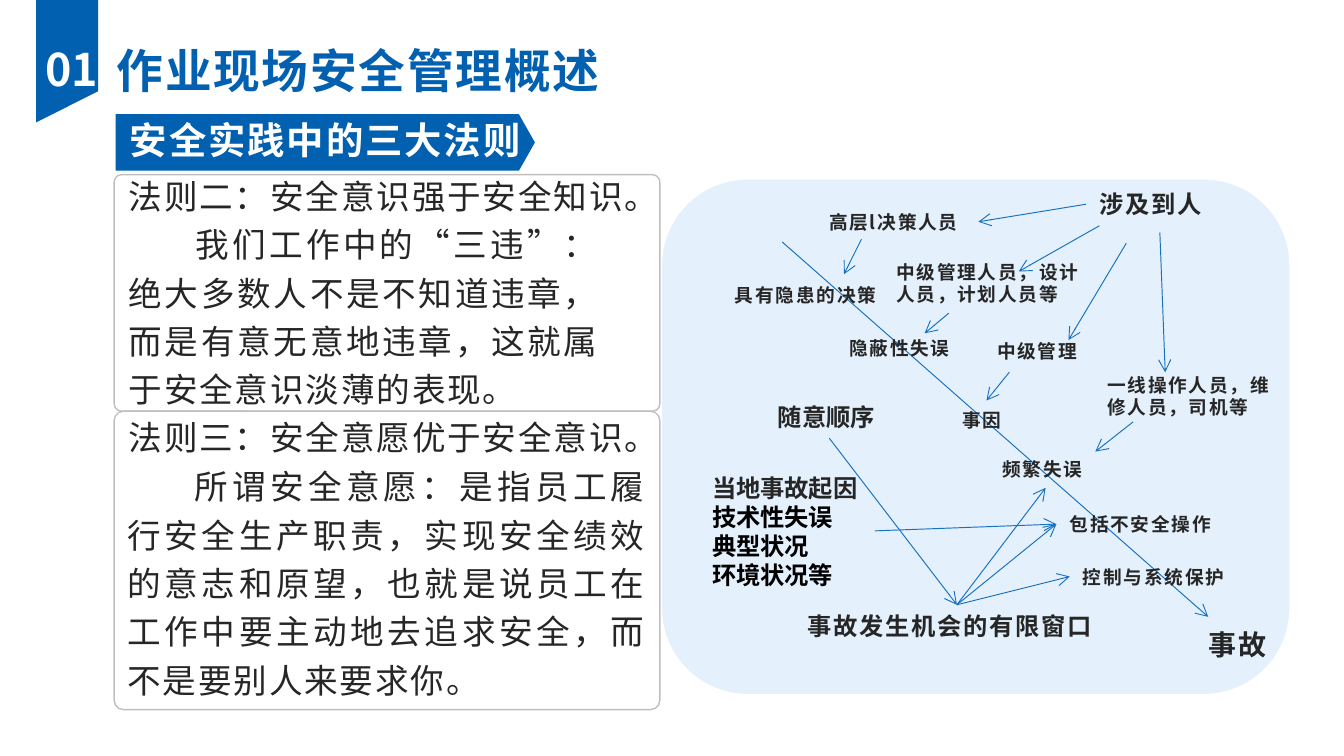
from dataclasses import dataclass, field
from typing import Any

from lxml import etree
from pptx import Presentation
from pptx import util as u
from pptx.dml.color import RGBColor
from pptx.enum import shapes, text
from pptx.oxml import ns

CM_PER_INCH = 2.54
SLIDE_WIDTH = u.Cm(25.4)
SLIDE_HEIGHT = u.Emu(SLIDE_WIDTH * 9 // 16)


@dataclass(frozen=True)
class Theme:
    font: str = "Noto Sans CJK SC"
    blue: str = "0160AF"
    arrow: str = "1770C0"
    panel: str = "CAE3F9"
    frame: str = "BFBFBF"
    ink: str = "262626"
    black: str = "000000"
    white: str = "FFFFFF"
    title: int = 25
    number: int = 24
    banner: int = 20
    body: int = 18
    outcome: int = 15
    heading: int = 13
    label: int = 10


THEME = Theme()


@dataclass(frozen=True)
class Label:
    box: tuple[float, float, float, float]
    lines: tuple[str, ...]
    size: int = THEME.label
    color: str = THEME.ink
    bold: bool = True
    spacing: int = 100
    indent: float = 0
    inset: bool = True
    rest_color: str = ""
    paragraph: dict[str, Any] = field(default_factory=dict)
    frame: dict[str, Any] = field(default_factory=dict)


@dataclass(frozen=True)
class Arrow:
    start: tuple[float, float]
    end: tuple[float, float]


@dataclass(frozen=True)
class Block:
    kind: shapes.MSO_SHAPE
    box: tuple[float, float, float, float]
    corner: float
    fill: str = ""
    line: str = ""
    width: float = 0.75
    alpha: int = 100


def length(inches: float) -> u.Length:
    return u.Cm(inches * CM_PER_INCH)


def apply(target: Any, values: dict[str, Any]) -> None:
    for name, value in values.items():
        setattr(target, name, value)


def paint(shape: Any, block: Block) -> None:
    shape.shadow.inherit = False
    if block.fill:
        shape.fill.solid()
        shape.fill.fore_color.rgb = RGBColor.from_string(block.fill)
        if block.alpha < 100:
            color = shape.fill._xPr.find(".//" + ns.qn("a:srgbClr"))
            etree.SubElement(color, ns.qn("a:alpha")).set("val", str(block.alpha * 1000))
    else:
        shape.fill.background()
    if block.line:
        shape.line.color.rgb = RGBColor.from_string(block.line)
        shape.line.width = u.Pt(block.width)
    else:
        shape.line.fill.background()


def draw_block(slide: Any, block: Block) -> None:
    shape = slide.shapes.add_shape(block.kind, *map(length, block.box))
    shape.adjustments[0] = block.corner
    paint(shape, block)


def draw_ribbon(slide: Any) -> None:
    left, right, shoulder, tip = 0.27, 0.73, 0.68, 0.91
    builder = slide.shapes.build_freeform(length(left), 0)
    corners = [(right, 0), (right, shoulder), (left, tip)]
    builder.add_line_segments([(length(x), length(y)) for x, y in corners], close=True)
    paint(builder.convert_to_shape(), Block(shapes.MSO_SHAPE.RECTANGLE, (0, 0, 0, 0), 0, THEME.blue))


def draw_label(slide: Any, label: Label) -> None:
    frame = slide.shapes.add_textbox(*map(length, label.box)).text_frame
    apply(frame, {"word_wrap": True, "auto_size": text.MSO_AUTO_SIZE.SHAPE_TO_FIT_TEXT} | label.frame)
    if not label.inset:
        apply(frame, dict.fromkeys(("margin_left", "margin_top", "margin_right", "margin_bottom"), 0))
    for index, line in enumerate(label.lines):
        paragraph = frame.add_paragraph() if index else frame.paragraphs[0]
        apply(paragraph, label.paragraph)
        if label.indent:
            paragraph._p.get_or_add_pPr().set("indent", str(length(label.indent)))
        run = paragraph.add_run()
        run.text = line
        apply(run.font, {"size": u.Pt(label.size), "bold": label.bold, "name": THEME.font})
        color = label.rest_color if index and label.rest_color else label.color
        run.font.color.rgb = RGBColor.from_string(color)
        properties = run._r.get_or_add_rPr()
        properties.set("spc", str(label.spacing))
        etree.SubElement(properties, ns.qn("a:ea")).set("typeface", THEME.font)


def draw_arrow(slide: Any, arrow: Arrow) -> None:
    connector = slide.shapes.add_connector(
        shapes.MSO_CONNECTOR.STRAIGHT, *map(length, arrow.start + arrow.end))
    connector.line.color.rgb = RGBColor.from_string(THEME.arrow)
    connector.line.width = u.Pt(0.5)
    etree.SubElement(connector.line._get_or_add_ln(), ns.qn("a:tailEnd")).set("type", "arrow")
    etree.SubElement(connector._element.spPr, ns.qn("a:effectLst"))


CENTER = {"alignment": text.PP_ALIGN.CENTER}
JUSTIFIED = {"alignment": text.PP_ALIGN.JUSTIFY, "line_spacing": 1.2}
NO_WRAP = {"word_wrap": False}
BODY = {"size": THEME.body, "bold": False}
HEADING = {"size": THEME.heading}
WINDOW = (7.12, 4.5)

BACKDROP = [
    Block(shapes.MSO_SHAPE.ROUNDED_RECTANGLE, (4.92, 1.33, 4.68, 3.84), 0.167,
          THEME.panel, THEME.white, 1, 50),
    Block(shapes.MSO_SHAPE.PENTAGON, (0.86, 0.85, 3.12, 0.42), 0.283, THEME.blue),
]
LAW_FRAMES = [
    Block(shapes.MSO_SHAPE.ROUNDED_RECTANGLE, (0.85, top, 4.06, height), 0.031, line=THEME.frame)
    for top, height in ((1.3, 1.76), (3.06, 2.22))
]
LABELS = [
    Label((0.7, 0.26, 3.93, 0.52), ("作业现场安全管理概述",), THEME.title, THEME.blue,
          paragraph=CENTER, frame=NO_WRAP),
    Label((0.18, 0.26, 0.71, 0.5), ("01",), THEME.number, THEME.white, spacing=0, paragraph=CENTER),
    Label((0.86, 0.82, 3.12, 0.44), ("安全实践中的三大法则",), THEME.banner, THEME.white,
          paragraph=CENTER, frame=NO_WRAP),
    Label((0.86, 1.26, 4.33, 0.4), ("法则二：安全意识强于安全知识。",), **BODY),
    Label((0.86, 1.56, 3.7, 1.55),
          ("我们工作中的“三违”：绝大多数人不是不知道违章，而是有意无意地违章，这就属于安全意识淡薄的表现。",),
          indent=0.5, paragraph=JUSTIFIED, **BODY),
    Label((0.86, 3.05, 4.3, 0.4), ("法则三：安全意愿优于安全意识。",), **BODY),
    Label((0.85, 3.36, 4.06, 1.92),
          ("所谓安全意愿：是指员工履行安全生产职责，实现安全绩效的意志和原望，"
           "也就是说员工在工作中要主动地去追求安全，而不是要别人来要求你。",),
          indent=0.5, paragraph=JUSTIFIED, **BODY),
    Label((8.99, 4.67, 0.48, 0.25), ("事故",), THEME.outcome, inset=False),
    Label((5.91, 4.5, 2.4, 0.32), ("事故发生机会的有限窗口",), **HEADING),
    Label((7.96, 4.16, 1.4, 0.27), ("控制与系统保护",)),
    Label((7.86, 3.77, 1.31, 0.27), ("包括不安全操作",)),
    Label((7.36, 3.36, 0.84, 0.27), ("频繁失误",)),
    Label((5.2, 3.47, 1.31, 0.97), ("当地事故起因", "技术性失误", "典型状况", "环境状况等"),
          spacing=0, rest_color=THEME.black, **HEADING),
    Label((5.69, 2.94, 0.97, 0.32), ("随意顺序",), spacing=0, **HEADING),
    Label((8.14, 2.73, 1.47, 0.44), ("一线操作人员，维修人员，司机等",)),
    Label((7.32, 2.48, 0.91, 0.27), ("中级管理",)),
    Label((7.06, 2.99, 0.59, 0.27), ("事因",)),
    Label((6.57, 1.89, 1.66, 0.44), ("中级管理人员，设计人员，计划人员等",)),
    Label((6.22, 2.46, 1.09, 0.27), ("隐蔽性失误",)),
    Label((6.07, 1.52, 1.21, 0.27), ("高层l决策人员",)),
    Label((5.37, 2.06, 1.3, 0.27), ("具有隐患的决策",)),
    Label((8.08, 1.36, 1.17, 0.32), ("涉及到人",), **HEADING),
]
ARROWS = [Arrow(WINDOW, end) for end in ((7.96, 4.29), (7.86, 3.9), (7.78, 3.63))] + [
    Arrow((5.82, 1.8), (8.99, 4.59)),
    Arrow((6.51, 3.95), (7.86, 3.9)),
    Arrow((6.17, 3.26), WINDOW),
    Arrow((8.43, 3.14), (8.15, 3.36)),
    Arrow((7.51, 2.77), (7.34, 2.98)),
    Arrow((7.06, 2.33), (6.88, 2.48)),
    Arrow((6.41, 1.78), (6.28, 2.04)),
    Arrow((8.08, 1.52), (7.28, 1.65)),
    Arrow((8.18, 1.68), (7.58, 2.02)),
    Arrow((8.38, 1.81), (7.95, 2.53)),
    Arrow((8.63, 1.73), (8.67, 2.77)),
]


def main() -> None:
    presentation = Presentation()
    apply(presentation, {"slide_width": SLIDE_WIDTH, "slide_height": SLIDE_HEIGHT})
    slide = presentation.slides.add_slide(presentation.slide_layouts[6])
    draw_ribbon(slide)
    for draw, items in ((draw_block, BACKDROP), (draw_arrow, ARROWS),
                        (draw_label, LABELS), (draw_block, LAW_FRAMES)):
        for item in items:
            draw(slide, item)
    presentation.save("out.pptx")


if __name__ == "__main__":
    main()
